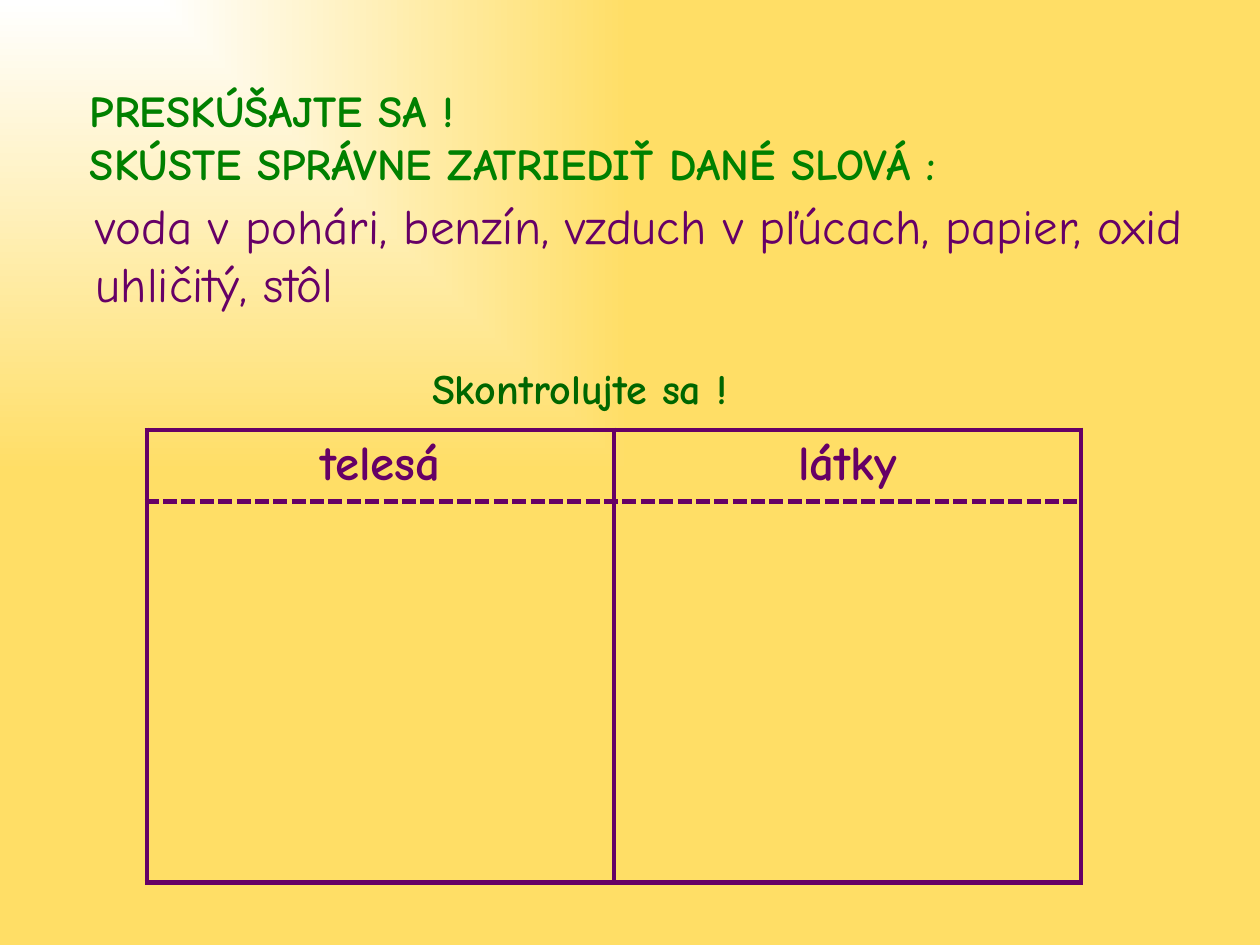
from pptx import Presentation
from pptx.dml.color import RGBColor
from pptx.enum.text import MSO_ANCHOR as ANCHOR, PP_ALIGN as ALIGN
from pptx.oxml import parse_xml
from pptx.oxml.ns import nsdecls, qn
from pptx.util import Emu, Pt

PX = 914400 // 126
FONT = "Comic Neue"
PURPLE, GREEN, DARK_GREEN = "660066", "008000", "006600"
TITLE = ["PRESKÚŠAJTE SA ! ", "SKÚSTE SPRÁVNE ZATRIEDIŤ DANÉ SLOVÁ :"]
WORDS = ["voda v pohári, benzín, vzduch v pľúcach, papier, oxid uhličitý, stôl"]
CHECK = ["Skontrolujte sa !"]
HEADERS = ["telesá", "látky"]
TEXTS = [
    # box, lines, size, colour, bold, anchor, vertical inset
    ((84, 32, 1071, 157), TITLE, 25.2, GREEN, True, ANCHOR.BOTTOM, 0),
    ((84, 189, 1113, 130), WORDS, 28, PURPLE, False, ANCHOR.TOP, 6),
    ((420, 357, 420, 63), CHECK, 24, DARK_GREEN, True, ANCHOR.TOP, 6),
]
TABLE_LEFT, TABLE_TOP, COL_WIDTH = 147, 430, 467
ROW_HEIGHTS = [63, 381]


def px(n):
    return Emu(n * PX)


def rgb(colour):
    return RGBColor.from_string(colour)


def write(p, lines, size, colour, bold):
    for i, line in enumerate(lines):
        if i:
            p.add_line_break()
        r = p.add_run()
        r.text = line
        r.font.name, r.font.size, r.font.bold = FONT, Pt(size), bold
        r.font.color.rgb = rgb(colour)


def add_text(s, box, lines, size, colour, bold, anchor, inset):
    tf = s.shapes.add_textbox(*map(px, box)).text_frame
    tf.word_wrap = True
    tf.vertical_anchor = anchor
    tf.margin_left = tf.margin_right = px(6 if inset == 0 else 12)
    tf.margin_top = tf.margin_bottom = px(inset)
    write(tf.paragraphs[0], lines, size, colour, bold)


def set_borders(cell, dashed):
    for side in "LRTB":
        dash = "sysDash" if side == dashed else "solid"
        cell._tc.get_or_add_tcPr().append(parse_xml(
            f'<a:ln{side} {nsdecls("a")} w="{Pt(3)}"><a:solidFill>'
            f'<a:srgbClr val="{PURPLE}"/></a:solidFill>'
            f'<a:prstDash val="{dash}"/></a:ln{side}>'))
    cell.fill.background()


def add_sorting_table(s):
    size = COL_WIDTH * len(HEADERS), sum(ROW_HEIGHTS)
    table = s.shapes.add_table(len(ROW_HEIGHTS), len(HEADERS), px(TABLE_LEFT),
                               px(TABLE_TOP), *map(px, size)).table
    table.first_row = table.horz_banding = False
    for row, height in zip(table.rows, ROW_HEIGHTS):
        row.height = px(height)
    for col, header in enumerate(HEADERS):
        table.columns[col].width = px(COL_WIDTH)
        p = table.cell(0, col).text_frame.paragraphs[0]
        p.alignment = ALIGN.CENTER
        write(p, [header], 28, PURPLE, True)
        for row, dashed in enumerate("BT"):
            set_borders(table.cell(row, col), dashed)


def set_background(s):
    fill = s.background.fill
    fill.gradient()
    for stop, colour in zip(fill.gradient_stops, ["FFFFFF", "FFDE66"]):
        stop.color.rgb = rgb(colour)
    for stop, position in zip(fill.gradient_stops, [0, 1]):
        stop.position = position
    lin = next(s.background._cSld.iter(qn("a:lin")))
    lin.getparent().replace(lin, parse_xml(
        f'<a:path {nsdecls("a")} path="rect">'
        '<a:fillToRect r="100000" b="100000"/></a:path>'))


def main():
    """Build the slide on sorting words into bodies and substances."""
    prs = Presentation()
    prs.slide_width, prs.slide_height = px(1260), px(945)
    s = prs.slides.add_slide(prs.slide_layouts[6])
    set_background(s)
    for text in TEXTS:
        add_text(s, *text)
    add_sorting_table(s)
    prs.save("out.pptx")


if __name__ == "__main__":
    main()
